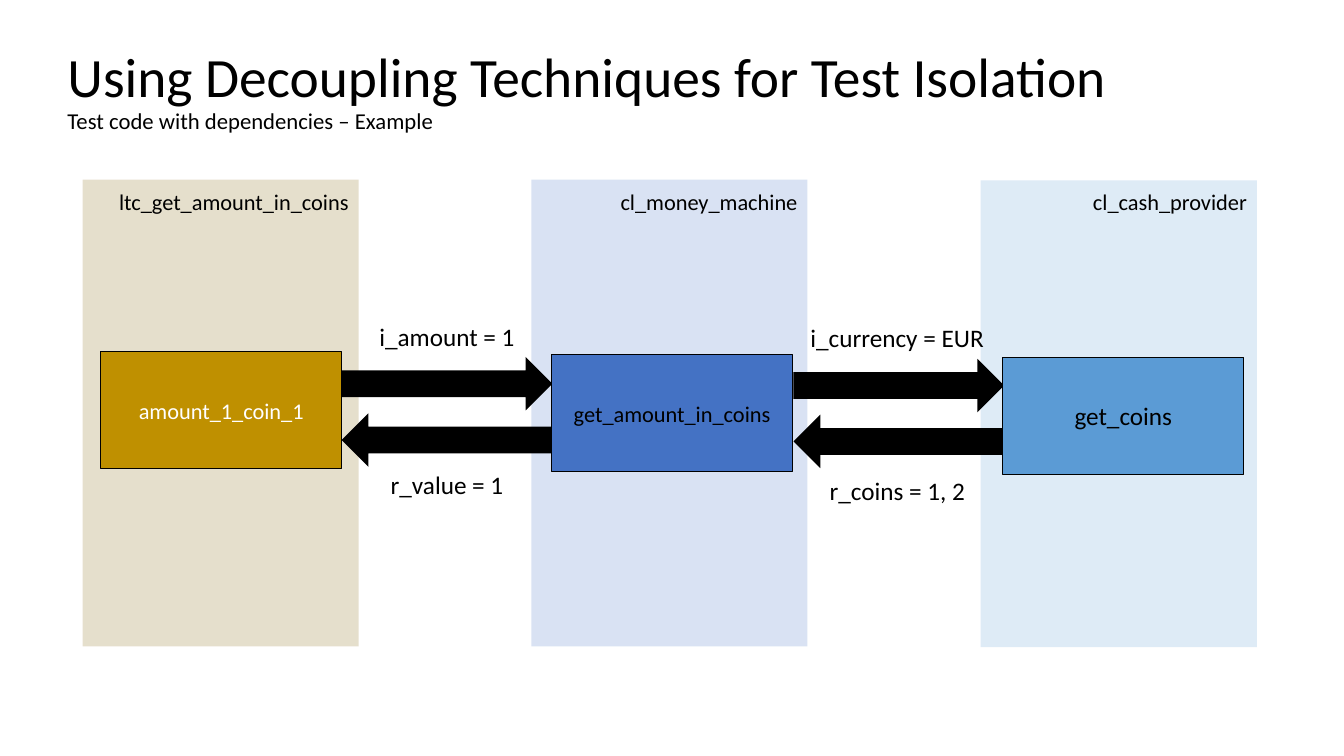
from copy import deepcopy

from lxml.etree import SubElement
from pptx import Presentation
from pptx.dml.color import RGBColor
from pptx.enum.shapes import MSO_SHAPE
from pptx.enum.text import MSO_ANCHOR, MSO_AUTO_SIZE, PP_ALIGN
from pptx.oxml.ns import qn
from pptx.util import Pt

BLACK = RGBColor(0x00, 0x00, 0x00)
WHITE = RGBColor(0xFF, 0xFF, 0xFF)
BROWN = RGBColor(0x80, 0x60, 0x00)
GOLD = RGBColor(0xBF, 0x90, 0x00)
BLUE = RGBColor(0x44, 0x72, 0xC4)
SKY = RGBColor(0x5B, 0x9B, 0xD5)


def write(sp, text, size=16, color=BLACK, align=PP_ALIGN.CENTER,
          anchor=MSO_ANCHOR.MIDDLE, inset=(7.2, 5.76)):
    """Add a formatted run to the first paragraph of a shape."""
    tf = sp.text_frame
    tf.word_wrap = True
    tf.auto_size = MSO_AUTO_SIZE.NONE
    tf.vertical_anchor = anchor
    tf.margin_left = tf.margin_right = Pt(inset[0])
    tf.margin_top = tf.margin_bottom = Pt(inset[1])
    p = tf.paragraphs[0]
    p.alignment = align
    r = p.add_run()
    r.text = text
    r.font.name = "Calibri"
    r.font.size = Pt(size)
    r.font.color.rgb = color
    return r


def add_block(kind, x, y, w, h, fill, outline=False):
    """Add a filled preset shape, with a thin black outline if wanted."""
    sp = s.shapes.add_shape(kind, Pt(x), Pt(y), Pt(w), Pt(h))
    sp.shadow.inherit = False
    sp.fill.solid()
    sp.fill.fore_color.rgb = fill
    if outline:
        sp.line.color.rgb = BLACK
        sp.line.width = Pt(0.5)
    else:
        sp.line.fill.background()
    return sp


prs = Presentation()
prs.slide_width, prs.slide_height = Pt(960), Pt(540)
s = prs.slides.add_slide(prs.slide_layouts[5])

# Title with a smaller second line
title = s.shapes.title
title.left, title.top, title.width, title.height = Pt(41), Pt(40.3), Pt(880.6), Pt(51.1)
title_format = dict(align=PP_ALIGN.LEFT, inset=(7.2, 3.6))
r = write(title, "Using Decoupling Techniques for Test Isolation", size=39.6, **title_format)
p = title.text_frame.paragraphs[0]
p.line_spacing = 0.9
p.add_line_break()
p._p[-1].append(deepcopy(r._r.rPr))
write(title, "Test code with dependencies – Example", size=16.2, **title_format)

# Class panels, 20 % opaque
panels = [
    ("ltc_get_amount_in_coins", 59, 128.3, BROWN),
    ("cl_money_machine", 379.5, 128.3, BLUE),
    ("cl_cash_provider", 700.5, 128.9, SKY),
]
for name, x, y, fill in panels:
    sp = add_block(MSO_SHAPE.RECTANGLE, x, y, 197.3, 333.4, fill)
    SubElement(next(sp._element.spPr.iter(qn("a:srgbClr"))), qn("a:alpha"), val="20000")
    write(sp, name, align=PP_ALIGN.RIGHT, anchor=MSO_ANCHOR.TOP)

# Call arrows to the right, return arrows to the left
for x, call_y, return_y in [(244, 255, 295.2), (566.8, 256.3, 296.2)]:
    for y, rotation in [(call_y, 0), (return_y, 180)]:
        sp = add_block(MSO_SHAPE.RIGHT_ARROW, x, y, 150.5, 38.2, BLACK)
        sp.rotation = rotation

# Method boxes
methods = [
    ("amount_1_coin_1", 72, 251.2, GOLD, WHITE, 16),
    ("get_amount_in_coins", 394, 253.4, BLUE, BLACK, 16),
    ("get_coins", 716.3, 255.2, SKY, BLACK, 18),
]
for name, x, y, fill, color, size in methods:
    sp = add_block(MSO_SHAPE.RECTANGLE, x, y, 172.2, 83.5, fill, outline=True)
    write(sp, name, size=size, color=color)

# Parameter labels
labels = [
    ("i_amount = 1", 257, 229.7, 124.6),
    ("r_value = 1", 257, 335.5, 124.6),
    ("i_currency = EUR", 567.4, 230.4, 146.9),
    ("r_coins = 1, 2", 566, 339.4, 149.8),
]
for text, x, y, w in labels:
    sp = s.shapes.add_textbox(Pt(x), Pt(y), Pt(w), Pt(21.6))
    write(sp, text, size=18, anchor=MSO_ANCHOR.TOP, inset=(0, 0))

prs.save("out.pptx")
